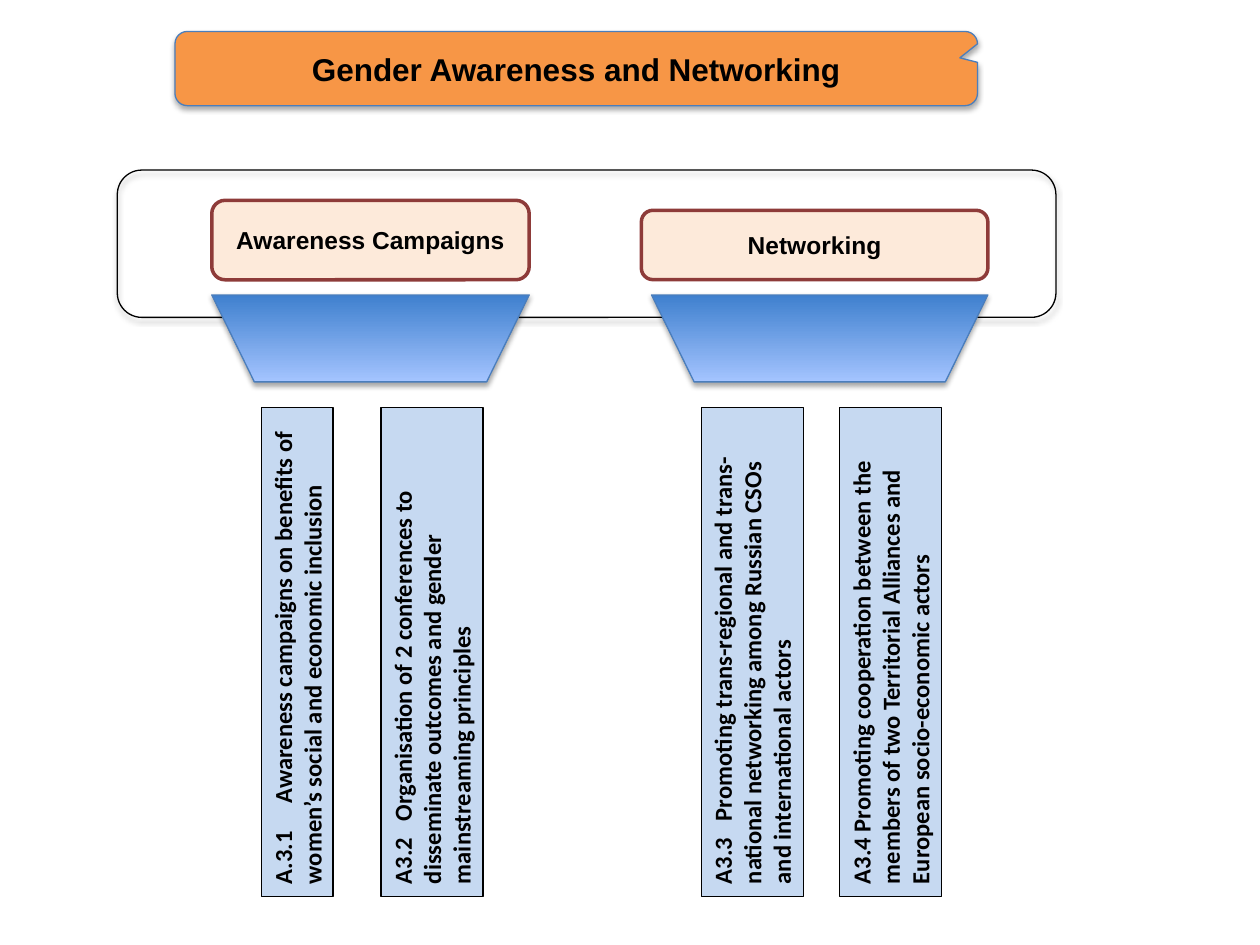
from lxml import etree
from pptx import Presentation
from pptx.dml.color import RGBColor
from pptx.enum.shapes import MSO_SHAPE
from pptx.enum.text import MSO_ANCHOR, MSO_AUTO_SIZE, PP_ALIGN
from pptx.oxml import parse_xml
from pptx.oxml.ns import nsdecls, qn
from pptx.util import Pt

ROUNDED = MSO_SHAPE.ROUNDED_RECTANGLE
CALLOUT = MSO_SHAPE.ROUNDED_RECTANGULAR_CALLOUT
RECTANGLE = MSO_SHAPE.RECTANGLE
TRAPEZOID = MSO_SHAPE.TRAPEZOID
MIDDLE = MSO_ANCHOR.MIDDLE
TOP = MSO_ANCHOR.TOP
CENTER = PP_ALIGN.CENTER
LEFT = PP_ALIGN.LEFT
GROW = MSO_AUTO_SIZE.SHAPE_TO_FIT_TEXT

BLACK = RGBColor(0x00, 0x00, 0x00)
ORANGE = RGBColor(0xF7, 0x96, 0x46)
PEACH = RGBColor(0xFD, 0xEA, 0xDA)
MAROON = RGBColor(0x8E, 0x3B, 0x39)
PALE_BLUE = RGBColor(0xC6, 0xD9, 0xF1)
EDGE_BLUE = RGBColor(0x4B, 0x7E, 0xBC)
DEEP_BLUE = RGBColor(0x3F, 0x80, 0xCE)
LIGHT_BLUE = RGBColor(0xA4, 0xC4, 0xFF)

FUNNEL_TOP, FUNNEL_HEIGHT = 168.5, 49.7
BAR_TOP, BAR_LENGTH = 232.9, 279.4

BRANCHES = [
    {"heading": "Awareness Campaigns", "box": (121, 114.5, 181.4, 45.4), "funnel_inset": 0,
     "activities": [
         (149.4, 41, 46, "A.3.1\tAwareness campaigns on benefits of women’s social "
                         "and economic inclusion"),
         (217.8, 58.3, 36, "A3.2\tOrganisation of 2 conferences to disseminate outcomes "
                           "and gender mainstreaming principles")]},
    {"heading": "Networking", "box": (366.5, 120.2, 198, 39.6), "funnel_inset": 5.8,
     "activities": [
         (400.7, 58.3, 36, "A3.3\tPromoting trans-regional and trans-national networking "
                           "among Russian CSOs and international actors"),
         (479.9, 58.3, 36, "A3.4 Promoting cooperation between the members of two "
                           "Territorial Alliances and European socio-economic actors")]},
]


def add_box(slide, preset, box, fill, edge, edge_width=0.75):
    """Add an outlined preset shape without shadow; a fill of None leaves it open."""
    shape = slide.shapes.add_shape(preset, *(Pt(length) for length in box))
    shape.shadow.inherit = False
    if fill is None:
        shape.fill.background()
    else:
        shape.fill.solid()
        shape.fill.fore_color.rgb = fill
    shape.line.color.rgb = edge
    shape.line.width = Pt(edge_width)
    return shape


def drop_shadow(shape):
    """Give the shape a soft shadow straight below it."""
    effects = shape._element.spPr.find(qn("a:effectLst"))
    effects.append(parse_xml(
        f'<a:outerShdw {nsdecls("a")} blurRad="{Pt(3.1)}" dist="{Pt(1.8)}" dir="5400000" '
        'rotWithShape="0"><a:srgbClr val="000000"><a:alpha val="35000"/></a:srgbClr>'
        '</a:outerShdw>'))


def write(shape, text, size, font, align, anchor):
    """Write one bold black paragraph into the shape."""
    frame = shape.text_frame
    frame.word_wrap = True
    frame.vertical_anchor = anchor
    frame.text = text
    paragraph = frame.paragraphs[0]
    paragraph.alignment = align
    for run in paragraph.runs:
        run.font.size = Pt(size)
        run.font.name = font
        run.font.bold = True
        run.font.color.rgb = BLACK


def add_title(slide, box):
    """Place the title callout."""
    title = add_box(slide, CALLOUT, box, ORANGE, EDGE_BLUE)
    for index, value in enumerate((0.478, -0.144, 0.167)):
        title.adjustments[index] = value
    drop_shadow(title)
    write(title, "Gender Awareness and Networking", 18, "Arial", CENTER, MIDDLE)


def add_funnel(slide, box):
    """Place a gradient trapezoid that narrows downwards."""
    funnel = add_box(slide, TRAPEZOID, box, DEEP_BLUE, EDGE_BLUE)
    funnel.rotation = 180
    funnel.adjustments[0] = 0.49
    funnel.fill.gradient()
    funnel.fill.gradient_angle = 90
    for stop, color, position in zip(funnel.fill.gradient_stops, (DEEP_BLUE, LIGHT_BLUE), (0, 1)):
        stop.color.rgb = color
        stop.position = position
    drop_shadow(funnel)


def add_activity(slide, box, tab, text):
    """Place an upright bar whose text reads from bottom to top."""
    left, top, width, height = box
    turned = (left + (width - height) / 2, top + (height - width) / 2, height, width)
    activity = add_box(slide, RECTANGLE, turned, PALE_BLUE, BLACK)
    activity.rotation = 270
    write(activity, text, 14, "Calibri", LEFT, TOP)
    activity.text_frame.auto_size = GROW
    if "\t" in text:
        properties = activity.text_frame.paragraphs[0]._p.get_or_add_pPr()
        tabs = etree.SubElement(properties, qn("a:tabLst"))
        etree.SubElement(tabs, qn("a:tab"), pos=str(Pt(tab)), algn="l")


def add_branch(slide, box, heading, funnel_inset, activities):
    """Place a heading box with its funnel and activity bars below."""
    left, _, width, _ = box
    label = add_box(slide, ROUNDED, box, PEACH, MAROON, 2)
    write(label, heading, 14, "Arial", CENTER, MIDDLE)
    add_funnel(slide, (left + funnel_inset, FUNNEL_TOP, width - funnel_inset, FUNNEL_HEIGHT))
    for bar_left, bar_width, tab, text in activities:
        add_activity(slide, (bar_left, BAR_TOP, bar_width, BAR_LENGTH), tab, text)


def main():
    """Build and save the slide."""
    deck = Presentation()
    deck.slide_width, deck.slide_height = Pt(720), Pt(540)
    slide = deck.slides.add_slide(deck.slide_layouts[6])
    panel = add_box(slide, ROUNDED, (67, 97.2, 536.4, 84.2), None, BLACK)
    drop_shadow(panel)
    add_title(slide, (100, 18, 458.6, 42.4))
    for branch in BRANCHES:
        add_branch(slide, **branch)
    deck.save("out.pptx")


if __name__ == "__main__":
    main()
